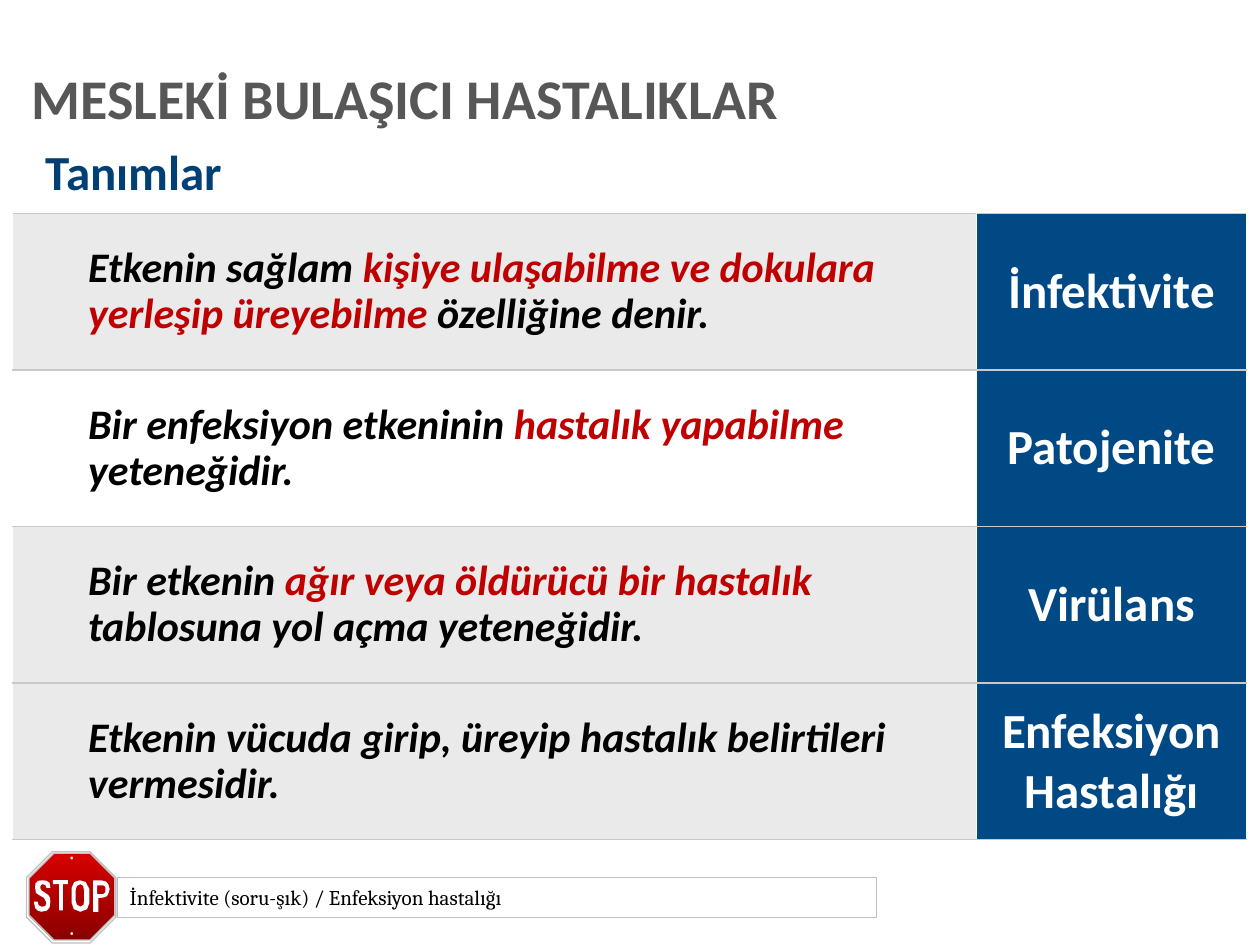
from pptx import Presentation, util as u
from pptx.dml.color import RGBColor
from pptx.enum import shapes as kinds, text
from pptx.oxml import parse_xml
from pptx.oxml.ns import nsdecls

Pt = u.Pt
LEFT, CENTER = text.PP_ALIGN.LEFT, text.PP_ALIGN.CENTER
MIDDLE = text.MSO_ANCHOR.MIDDLE
BLACK, RED, WHITE, GRAY = "000000", "C00000", "FFFFFF", "575757"
BLUE, BAND, RULE, SILVER = "004985", "EAEAEA", "C9C9C9", "C0C0C0"

TITLE = [("MESLEKİ BULAŞICI HASTALIKLAR", GRAY)]
SUBTITLE = [("Tanımlar", "004074")]
NOTE = [("İnfektivite (soru-şık) / Enfeksiyon hastalığı", BLACK)]
DEFINITIONS = [
    ("İnfektivite", BAND, [
        ("Etkenin sağlam ", BLACK),
        ("kişiye ulaşabilme ve dokulara yerleşip üreyebilme", RED),
        (" özelliğine denir.", BLACK)]),
    ("Patojenite", WHITE, [
        ("Bir enfeksiyon etkeninin ", BLACK),
        ("hastalık yapabilme ", RED),
        ("yeteneğidir.", BLACK)]),
    ("Virülans", BAND, [
        ("Bir etkenin ", BLACK),
        ("ağır veya öldürücü bir hastalık ", RED),
        ("tablosuna yol açma yeteneğidir.", BLACK)]),
    ("Enfeksiyon Hastalığı", BAND, [
        ("Etkenin vücuda girip, üreyip hastalık belirtileri vermesidir.", BLACK)]),
]
COLUMNS = (550.8, 154.4)
ROW_HEIGHT = 89.5

LETTER_TOP = 503
LETTERS = [
    (19.4, [[(72, 43), (94, 43), (90, 15), (72, 3), (50, 0), (25, 3), (9, 18),
             (7, 43), (12, 72), (32, 86), (58, 101), (72, 130), (65, 148),
             (43, 151), (27, 143), (22, 122), (0, 122), (7, 158), (22, 173),
             (43, 180), (75, 173), (90, 155), (94, 122), (92, 100), (82, 84),
             (65, 72), (43, 58), (36, 43), (40, 27), (50, 22), (65, 27)]]),
    (30.2, [[(0, 0), (86, 0), (86, 22), (58, 22), (58, 173), (36, 173),
             (36, 22), (0, 22)]]),
    (41, [[(46, 0), (15, 10), (0, 43), (0, 130), (12, 165), (50, 180),
           (88, 165), (101, 130), (101, 50), (80, 10)],
          [(72, 115), (68, 140), (50, 151), (30, 140), (22, 115), (22, 58),
           (30, 32), (50, 22), (66, 32), (72, 65)]]),
    (53.3, [[(86, 22), (72, 7), (43, 0), (0, 0), (0, 180), (29, 180),
             (29, 101), (43, 101), (65, 97), (79, 90), (88, 72), (94, 50)],
            [(58, 79), (22, 79), (22, 29), (58, 29), (70, 38), (70, 68)]]),
]
OCTAGONS = [(15.1, 486.7, 51.1, 52.2), (16.6, 487.6, 49, 49.6)]
BOLT_X, BOLT_YS = 41, (490.3, 533.5)
BOLTS = [(1.6, "D2D2D2"), (0.8, WHITE)]


def color(value):
    return RGBColor.from_string(value)


def apply(target, values):
    for name, value in values.items():
        setattr(target, name, value)


def write(frame, runs, font, paragraph=None, box=None):
    apply(frame, {"word_wrap": True, **(box or {})})
    line = frame.paragraphs[0]
    apply(line, paragraph or {})
    for words, tint in runs:
        run = line.add_run()
        run.text = words
        apply(run.font, {"name": "Calibri", "bold": True, "italic": False, **font})
        run.font.color.rgb = color(tint)
    return line


def paint(shape, fill=None, line=None, width=0.75):
    shape.shadow.inherit = False
    if fill:
        shape.fill.solid()
        shape.fill.fore_color.rgb = color(fill)
    else:
        shape.fill.background()
    if line:
        shape.line.color.rgb = color(line)
        shape.line.width = Pt(width)
    else:
        shape.line.fill.background()


def place(parent, kind, *area):
    return parent.add_shape(kind, *map(Pt, area))


def rule_cell(cell):
    for side in ("lnT", "lnB"):
        border = parse_xml(
            f'<a:{side} {nsdecls("a")} w="{Pt(1)}"><a:solidFill>'
            f'<a:srgbClr val="{RULE}"/></a:solidFill></a:{side}>')
        cell._tc.get_or_add_tcPr().append(border)


def build_table(slide):
    table = slide.shapes.add_table(
        len(DEFINITIONS), 2, Pt(7.2), Pt(121.9),
        Pt(sum(COLUMNS)), Pt(ROW_HEIGHT * len(DEFINITIONS))).table
    apply(table, {"first_row": False, "horz_banding": False})
    for column, width in zip(table.columns, COLUMNS):
        column.width = Pt(width)
    for row, (term, band, meaning) in enumerate(DEFINITIONS):
        table.rows[row].height = Pt(ROW_HEIGHT)
        left, right = table.cell(row, 0), table.cell(row, 1)
        for cell, fill in ((left, band), (right, BLUE)):
            cell.vertical_anchor = MIDDLE
            rule_cell(cell)
            cell.fill.solid()
            cell.fill.fore_color.rgb = color(fill)
        line = write(left.text_frame, meaning, {"size": Pt(24), "italic": True},
                     {"level": 1, "line_spacing": 0.9})
        properties = line._p.get_or_add_pPr()
        properties.set("marL", str(Pt(36)))
        properties.set("indent", "0")
        write(right.text_frame, [(term, WHITE)], {"size": Pt(28)},
              {"alignment": CENTER})


def build_headings(slide):
    for area, runs, size, paragraph, box in [
        ((19, 77.5, 373.7, 41), SUBTITLE, 28, {}, {}),
        ((18, 32.4, 694, 51.1), TITLE, 32, {"line_spacing": 0.9},
         {"margin_left": 0, "margin_right": 0, "vertical_anchor": MIDDLE}),
    ]:
        frame = slide.shapes.add_textbox(*map(Pt, area)).text_frame
        write(frame, runs, {"size": Pt(size)}, paragraph, box)


def build_stop_note(slide):
    parts = slide.shapes.add_group_shape().shapes
    for area in OCTAGONS:
        face = place(parts, kinds.MSO_SHAPE.OCTAGON, *area)
        face.adjustments[0] = 0.29
        paint(face, WHITE, SILVER)
    face.fill.gradient()
    face.fill.gradient_angle = 270
    for stop, tint in zip(face.fill.gradient_stops, ("D60000", "8A0000")):
        stop.color.rgb = color(tint)

    for left, outlines in LETTERS:
        first, *holes = outlines
        pen = parts.build_freeform(*first[0], scale=Pt(0.1))
        pen.add_line_segments(first[1:])
        for hole in holes:
            pen.move_to(*hole[0])
            pen.add_line_segments(hole[1:])
        paint(pen.convert_to_shape(Pt(left), Pt(LETTER_TOP)), WHITE)

    for y in BOLT_YS:
        for size, tint in BOLTS:
            bolt = place(parts, kinds.MSO_SHAPE.OVAL,
                         BOLT_X - size / 2, y - size / 2, size, size)
            paint(bolt, tint)

    note = place(parts, kinds.MSO_SHAPE.RECTANGLE, 67, 501.1, 433.8, 23)
    paint(note, line="BFBFBF", width=0.25)
    write(note.text_frame, NOTE, {"size": Pt(12), "name": "Cambria", "bold": False},
          {"alignment": LEFT}, {"vertical_anchor": MIDDLE})


def main():
    deck = Presentation()
    apply(deck, {"slide_width": Pt(720), "slide_height": Pt(540)})
    slide = deck.slides.add_slide(deck.slide_layouts[6])
    build_table(slide)
    build_headings(slide)
    build_stop_note(slide)
    deck.save("out.pptx")


if __name__ == "__main__":
    main()
